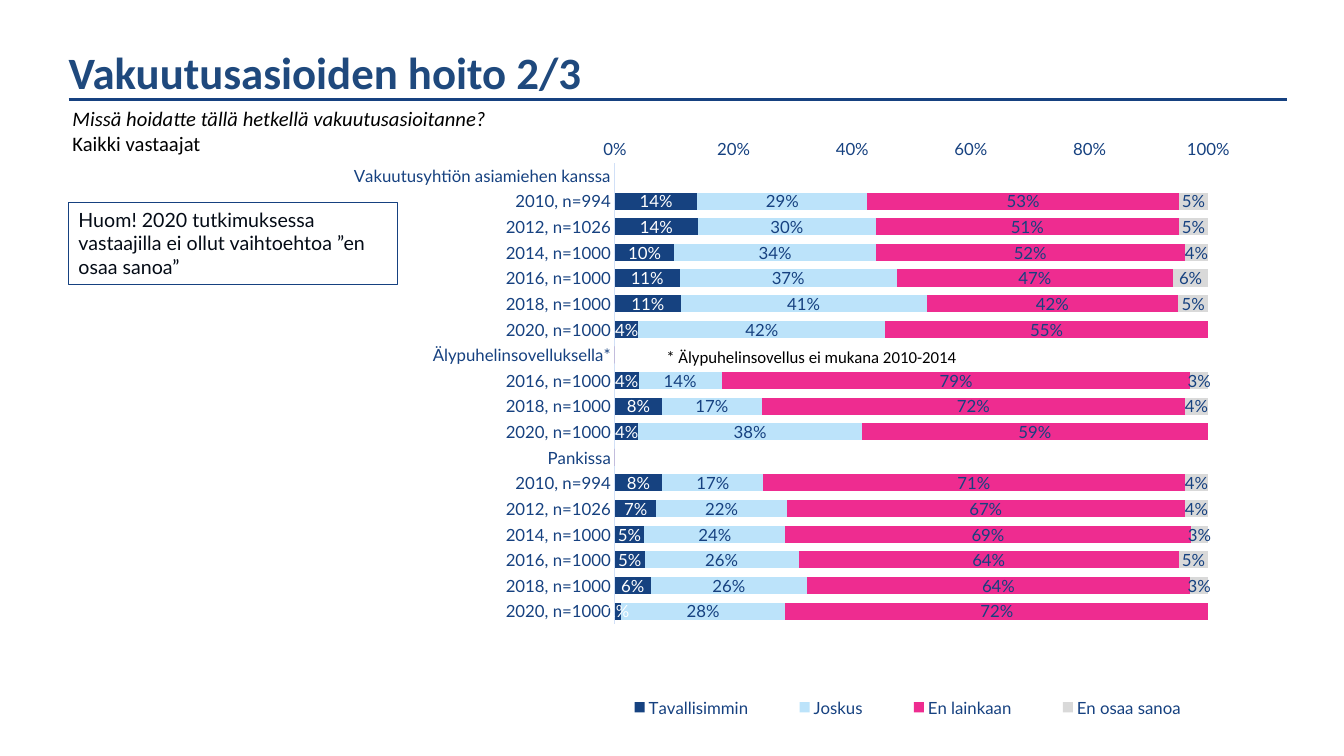
from dataclasses import dataclass

import lxml.etree
import pptx
import pptx.chart.data
import pptx.dml.color
import pptx.enum.chart
import pptx.enum.shapes
import pptx.enum.text
import pptx.oxml.ns
import pptx.util

Inches = pptx.util.Inches
Pt = pptx.util.Pt
rgb = pptx.dml.color.RGBColor.from_string
qn = pptx.oxml.ns.qn


@dataclass(frozen=True)
class Theme:
    navy: str = "164180"
    title: str = "1F497D"
    axis: str = "D1E0F7"
    black: str = "000000"
    ink: str = "040B16"
    white: str = "FFFFFF"
    heading_font: str = "Calibri"
    chart_font: str = "Lato"
    title_size: float = 32
    question_size: float = 14.7
    note_size: float = 14
    small_size: float = 12


THEME = Theme()


@dataclass(frozen=True)
class Answer:
    name: str
    color: str
    label_color: str


@dataclass(frozen=True)
class Channel:
    name: str
    header_value: float | None
    years: dict[str, tuple[float, ...]]


@dataclass(frozen=True)
class Box:
    left: float
    top: float
    width: float
    height: float

    def lengths(self) -> tuple[int, ...]:
        return tuple(Inches(v) for v in (self.left, self.top, self.width, self.height))


ANSWERS = [
    Answer("Tavallisimmin", "164280", THEME.white),
    Answer("Joskus", "BCE3FA", THEME.navy),
    Answer("En lainkaan", "EE2C90", THEME.navy),
    Answer("En osaa sanoa", "D9D9D9", THEME.navy),
]

# Shares per survey year, in the order of ANSWERS
CHANNELS = [
    Channel("Vakuutusyhtiön asiamiehen kanssa", None, {
        "2010, n=994": (0.14, 0.29, 0.53, 0.05),
        "2012, n=1026": (0.14, 0.30, 0.51, 0.05),
        "2014, n=1000": (0.10, 0.34, 0.52, 0.04),
        "2016, n=1000": (0.11, 0.37, 0.47, 0.06),
        "2018, n=1000": (0.11, 0.41, 0.42, 0.05),
        "2020, n=1000": (0.04, 0.42, 0.55, 0),
    }),
    Channel("Älypuhelinsovelluksella*", 0, {
        "2016, n=1000": (0.04, 0.14, 0.79, 0.03),
        "2018, n=1000": (0.08, 0.17, 0.72, 0.04),
        "2020, n=1000": (0.04, 0.38, 0.59, 0),
    }),
    Channel("Pankissa", 0, {
        "2010, n=994": (0.08, 0.17, 0.71, 0.04),
        "2012, n=1026": (0.07, 0.22, 0.67, 0.04),
        "2014, n=1000": (0.05, 0.24, 0.69, 0.03),
        "2016, n=1000": (0.05, 0.26, 0.64, 0.05),
        "2018, n=1000": (0.06, 0.26, 0.64, 0.03),
        "2020, n=1000": (0.01, 0.28, 0.72, 0),
    }),
]


def set_font(font, name: str, size: float, color: str) -> None:
    font.name, font.size = name, Pt(size)
    font.color.rgb = rgb(color)


def place(parent, index: int, box: Box, inner: bool = False) -> None:
    """Fix a chart part at fractions of the chart area."""
    for old in parent.findall(qn("c:layout")):
        parent.remove(old)
    layout = lxml.etree.Element(qn("c:layout"))
    manual = lxml.etree.SubElement(layout, qn("c:manualLayout"))
    settings = {"layoutTarget": "inner"} if inner else {}
    settings |= {"xMode": "edge", "yMode": "edge", "x": box.left, "y": box.top,
                 "w": box.width, "h": box.height}
    for tag, value in settings.items():
        lxml.etree.SubElement(manual, qn(f"c:{tag}")).set("val", str(value))
    parent.insert(index, layout)


def survey_data() -> pptx.chart.data.CategoryChartData:
    rows = []
    for channel in CHANNELS:
        rows.append((channel.name, (channel.header_value,) * len(ANSWERS)))
        rows.extend(channel.years.items())
    data = pptx.chart.data.CategoryChartData(number_format="0%")
    data.categories = [label for label, _ in rows]
    for i, answer in enumerate(ANSWERS):
        data.add_series(answer.name, [shares[i] for _, shares in rows])
    return data


def add_survey_chart(slide, box: Box) -> None:
    kinds = pptx.enum.chart
    chart = slide.shapes.add_chart(
        kinds.XL_CHART_TYPE.BAR_STACKED_100, *box.lengths(), survey_data()).chart
    chart.has_title = False
    set_font(chart.font, THEME.chart_font, THEME.small_size, THEME.navy)

    # Bars and their labels; zero shares show no label
    plot = chart.plots[0]
    plot.gap_width, plot.overlap, plot.vary_by_categories = 50, 100, False
    for answer, series in zip(ANSWERS, plot.series):
        series.format.fill.solid()
        series.format.fill.fore_color.rgb = rgb(answer.color)
        labels = series.data_labels
        labels.show_value = True
        labels.number_format, labels.number_format_is_linked = "0%;;", False
        set_font(labels.font, THEME.chart_font, THEME.small_size, answer.label_color)

    # Axes
    years, share = chart.category_axis, chart.value_axis
    for axis in (years, share):
        axis.major_tick_mark = axis.minor_tick_mark = kinds.XL_TICK_MARK.NONE
        axis.has_major_gridlines = False
    years.reverse_order = True
    years.crosses = kinds.XL_AXIS_CROSSES.MAXIMUM
    years.format.line.color.rgb = rgb(THEME.axis)
    years.format.line.width = Pt(0.75)
    share.minimum_scale, share.maximum_scale, share.major_unit = 0, 1, 0.2
    share.tick_labels.number_format = "0%"
    share.tick_labels.number_format_is_linked = False
    share.format.line.fill.background()

    # Legend under the bars
    chart.has_legend = True
    chart.legend.position = kinds.XL_LEGEND_POSITION.BOTTOM
    chart.legend.include_in_layout = False
    place(chart.legend._element, 1, Box(0.46, 0.92, 0.52, 0.06))
    plot_area = chart._chartSpace.chart.plotArea
    place(plot_area, 0, Box(0.481, 0.06, 0.484, 0.754), inner=True)


def write(frame, lines: list[str], font: str, size: float, color: str,
          wrap: bool = True) -> None:
    frame.word_wrap = wrap
    frame.auto_size = pptx.enum.text.MSO_AUTO_SIZE.NONE
    frame.vertical_anchor = pptx.enum.text.MSO_ANCHOR.TOP
    frame.text = "\n".join(lines)
    for paragraph in frame.paragraphs:
        paragraph.alignment = pptx.enum.text.PP_ALIGN.LEFT
        set_font(paragraph.font, font, size, color)


def main() -> None:
    deck = pptx.Presentation()
    deck.slide_width, deck.slide_height = Inches(13.33), Inches(7.5)
    slide = deck.slides.add_slide(deck.slide_layouts[5])
    shapes = slide.shapes

    add_survey_chart(slide, Box(0.25, 1.25, 12.16, 6.07))

    # Title and the rule below it
    title = shapes.title
    title.left, title.top, title.width, title.height = Box(0.58, 0.39, 11.86, 0.64).lengths()
    write(title.text_frame, ["Vakuutusasioiden hoito 2/3"],
          THEME.heading_font, THEME.title_size, THEME.title)
    title.text_frame.paragraphs[0].font.bold = True
    rule = shapes.add_connector(pptx.enum.shapes.MSO_CONNECTOR.STRAIGHT,
                                Inches(0.68), Inches(0.99), Inches(12.76), Inches(0.99))
    rule.line.color.rgb = rgb(THEME.navy)
    rule.line.width = Pt(2.25)
    lxml.etree.SubElement(rule._element.spPr, qn("a:effectLst"))

    # Survey question and respondents
    question = shapes.add_textbox(*Box(0.62, 1, 12.13, 0.59).lengths()).text_frame
    write(question, ["Missä hoidatte tällä hetkellä vakuutusasioitanne?", "Kaikki vastaajat"],
          THEME.heading_font, THEME.question_size, THEME.black)
    question.paragraphs[0].font.italic = True

    # Notes
    footnote = shapes.add_textbox(*Box(6.51, 3.39, 3.12, 0.3).lengths()).text_frame
    write(footnote, ["* Älypuhelinsovellus ei mukana 2010-2014"],
          THEME.heading_font, THEME.small_size, THEME.black, wrap=False)
    notice = shapes.add_shape(pptx.enum.shapes.MSO_SHAPE.RECTANGLE,
                              *Box(0.68, 2.01, 3.26, 0.81).lengths())
    notice.shadow.inherit = False
    notice.fill.background()
    notice.line.color.rgb = rgb(THEME.navy)
    notice.line.width = Pt(0.25)
    write(notice.text_frame,
          ["Huom! 2020 tutkimuksessa vastaajilla ei ollut vaihtoehtoa ”en osaa sanoa”"],
          THEME.chart_font, THEME.note_size, THEME.ink)

    deck.save("out.pptx")


if __name__ == "__main__":
    main()
